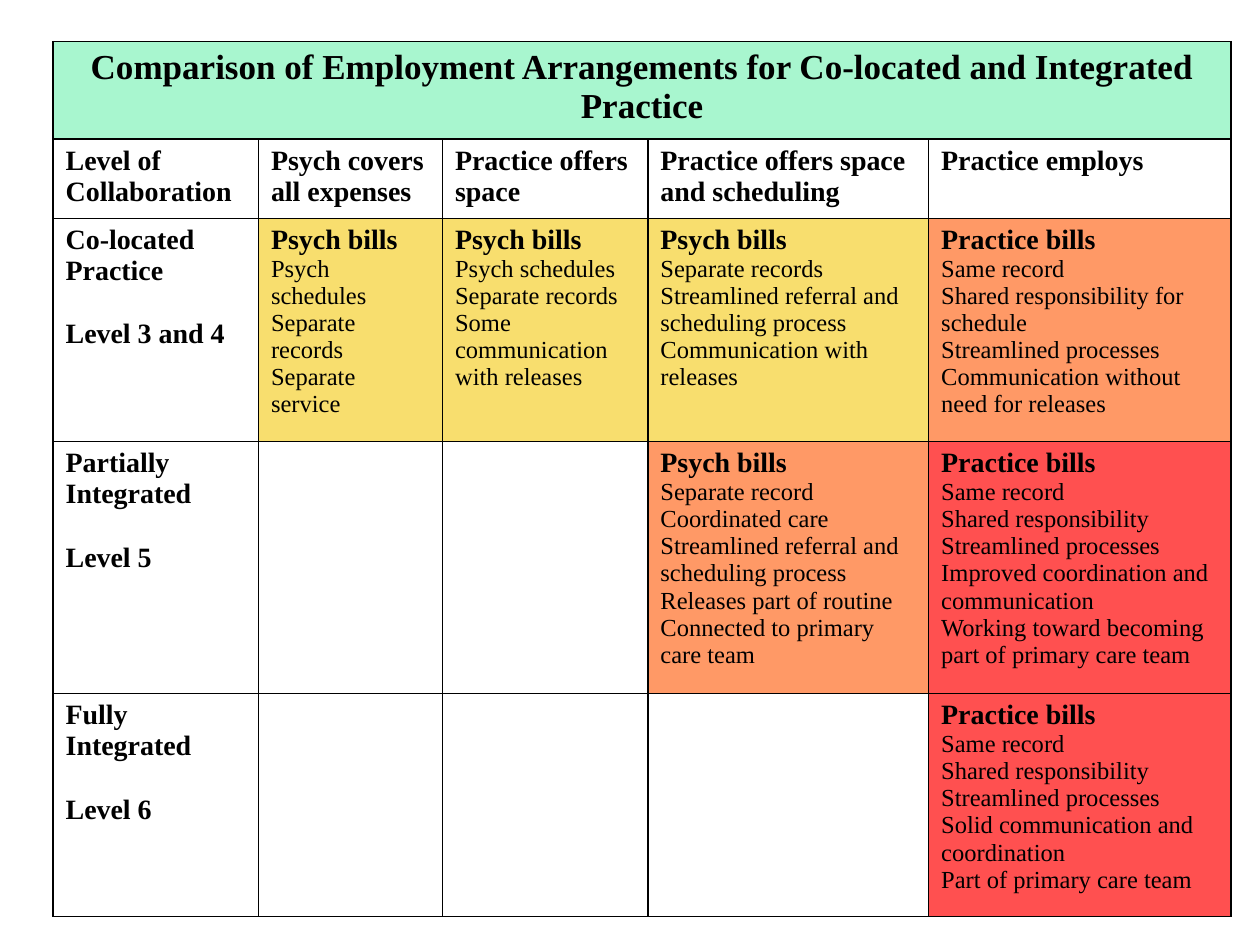
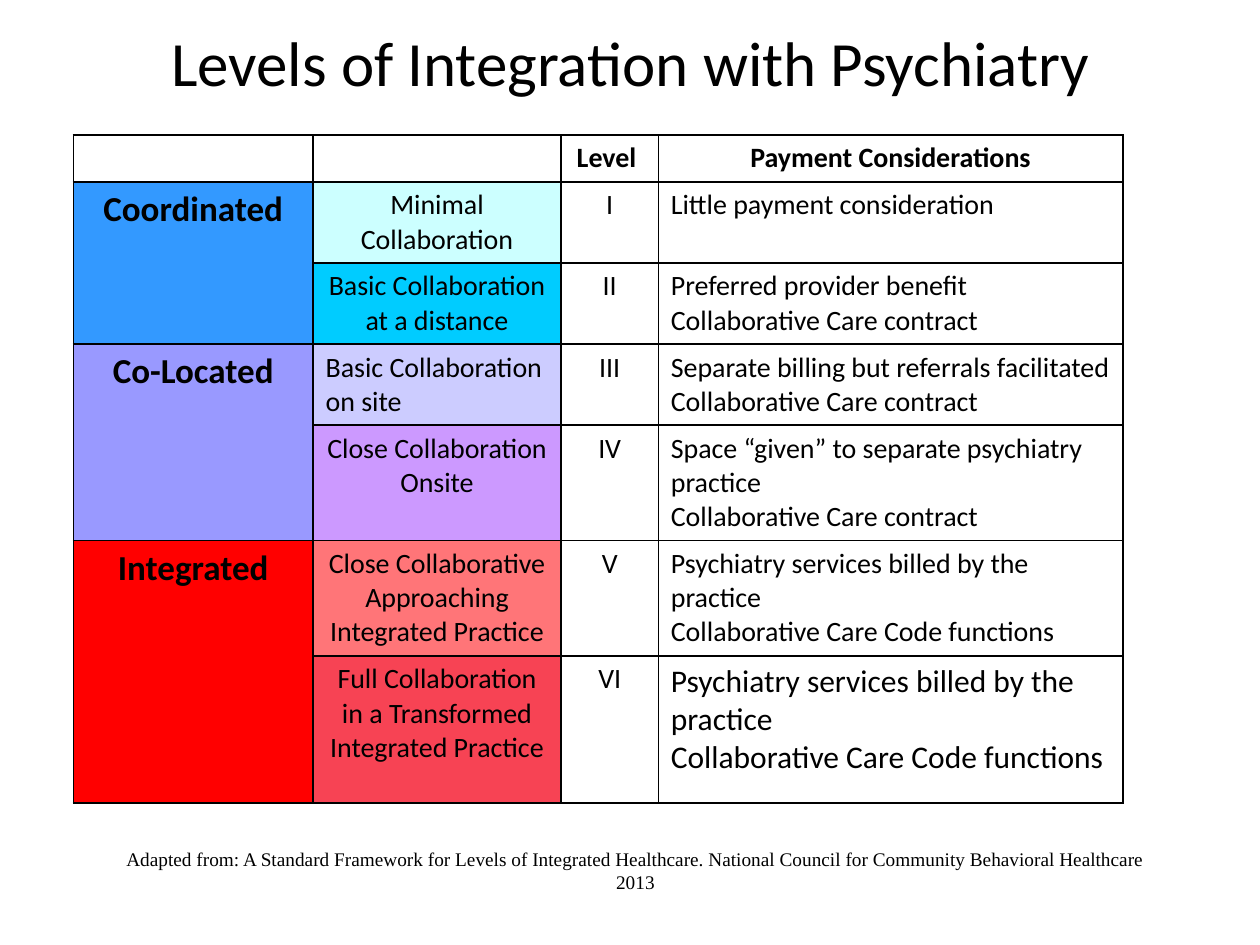
from dataclasses import dataclass
from functools import partial

from lxml.etree import SubElement
from pptx import Presentation
from pptx.enum.text import MSO_ANCHOR, PP_ALIGN
from pptx.oxml import parse_xml
from pptx.oxml.ns import nsdecls, qn
from pptx.dml.color import RGBColor
from pptx.slide import Slide
from pptx.table import Table, _Cell
from pptx.text.text import TextFrame
from pptx.util import Cm, Pt

HUES = {
    "black": "000000", "white": "FFFFFF", "mint": "A8F6CF",
    "yellow": "F8DE6E", "orange": "FF9966", "coral": "FF5050",
    "blue": "3399FF", "ice": "CCFFFF", "cyan": "00CCFF",
    "iris": "9999FF", "lilac": "CCCCFF", "purple": "CC99FF",
    "red": "FF0000", "pink": "FF7578", "rose": "F74354",
}
SERIF, SANS = "Times New Roman", "Calibri"
LEFT, MID = PP_ALIGN.LEFT, PP_ALIGN.CENTER


@dataclass(frozen=True)
class Item:
    """A cell: a head, then optional detail lines in their own format."""
    head: str = ""
    fill: str = "white"
    size: int = 16
    bold: bool = False
    align: PP_ALIGN = LEFT
    more: str = ""
    small: int = 14
    heavy: bool = False
    gap: float = 0
    down: int = 1
    wide: int = 1


@dataclass(frozen=True)
class Grid:
    left: float
    top: float
    cols: tuple[float, ...]
    rows: tuple[float, ...]
    font: str
    items: list[list[Item | None]]


def write(frame: TextFrame, text: str, *, font: str, size: int,
          bold: bool = False, align: PP_ALIGN = LEFT, gap: float = 0) -> None:
    """Append one paragraph per line; gap is the space above the first."""
    for num, line in enumerate(text.split("\n")):
        par = frame.add_paragraph() if frame.text else frame.paragraphs[0]
        par.alignment = align
        if gap and num == 0:
            par.space_before = Pt(gap)
        run = par.add_run()
        run.text = line
        run.font.name = font
        run.font.size = Pt(size)
        run.font.bold = bold
        run.font.color.rgb = RGBColor.from_string(HUES["black"])


def edge(cell: _Cell) -> None:
    """Rule all four sides of a cell."""
    props = cell._tc.get_or_add_tcPr()
    for num, side in enumerate("LRTB"):
        props.insert(num, parse_xml(
            f'<a:ln{side} {nsdecls("a")} w="12700"><a:solidFill>'
            f'<a:srgbClr val="{HUES["black"]}"/></a:solidFill></a:ln{side}>'))


def fill(table: Table, row: int, col: int, item: Item, font: str) -> None:
    cell = table.cell(row, col)
    if item.down > 1 or item.wide > 1:
        cell.merge(table.cell(row + item.down - 1, col + item.wide - 1))
    cell.fill.solid()
    cell.fill.fore_color.rgb = RGBColor.from_string(HUES[item.fill])
    edge(cell)
    frame = cell.text_frame
    if not item.head:
        SubElement(frame.paragraphs[0]._p, qn("a:endParaRPr"),
                   sz=str(item.size * 100))
        return
    write(frame, item.head, font=font, size=item.size, bold=item.bold,
          align=item.align)
    if item.more:
        write(frame, item.more, font=font, size=item.small, bold=item.heavy,
              gap=item.gap)


def draw(slide: Slide, grid: Grid) -> None:
    shape = slide.shapes.add_table(
        len(grid.rows), len(grid.cols), Cm(grid.left), Cm(grid.top),
        Cm(sum(grid.cols)), Cm(sum(grid.rows)))
    table = shape.table
    table.first_row = table.horz_banding = False
    for col, width in zip(table.columns, grid.cols):
        col.width = Cm(width)
    for row, height in zip(table.rows, grid.rows):
        row.height = Cm(height)
    for row, line in enumerate(grid.items):
        for col, item in enumerate(line):
            if item:
                fill(table, row, col, item, grid.font)
            else:
                edge(table.cell(row, col))


Head = partial(Item, bold=True)
Psych = partial(Head, "Psych bills")
Hire = partial(Head, "Practice bills")
Stage = partial(Head, small=16, heavy=True, gap=18.4)
Group = partial(Head, size=20, align=MID, down=2)
Note = partial(Item, align=MID)
VOID = Item()

JOBS = Grid(1.07, 0.84, (4.14, 3.71, 4.14, 5.66, 6.1),
            (1.96, 1.6, 4.5, 5.08, 4.5), SERIF, [
    [Head("Comparison of Employment Arrangements for Co-located and "
          "Integrated Practice", "mint", size=20, align=MID, wide=5),
     None, None, None, None],
    [Head(name) for name in (
        "Level of Collaboration", "Psych covers all expenses",
        "Practice offers space", "Practice offers space and scheduling",
        "Practice employs")],
    [Stage("Co-located Practice", more="Level 3 and 4"),
     Psych("yellow", more="Psych schedules\nSeparate records\n"
                          "Separate service"),
     Psych("yellow", more="Psych schedules\nSeparate records\n"
                          "Some communication with releases"),
     Psych("yellow", more="Separate records\n"
                          "Streamlined referral and scheduling process\n"
                          "Communication with releases"),
     Hire("orange", more="Same record\nShared responsibility for schedule\n"
                         "Streamlined processes\n"
                         "Communication without need for releases")],
    [Stage("Partially Integrated", more="Level 5"), VOID, VOID,
     Psych("orange", more="Separate record\nCoordinated care\n"
                          "Streamlined referral and scheduling process\n"
                          "Releases part of routine\n"
                          "Connected to primary care team"),
     Hire("coral", more="Same record\nShared responsibility\n"
                        "Streamlined processes\n"
                        "Improved coordination and communication\n"
                        "Working toward becoming part of primary care team")],
    [Stage("Fully Integrated", more="Level 6"), VOID, VOID, VOID,
     Hire("coral", more="Same record\nShared responsibility\n"
                        "Streamlined processes\n"
                        "Solid communication and coordination\n"
                        "Part of primary care team")],
])

CARE = "Collaborative Care contract"
CODE = ("Psychiatry services billed by the practice\n"
        "Collaborative Care Code functions")
STEPS = Grid(1.48, 2.72, (4.83, 5, 1.96, 9.37),
             (0.94, 1.6, 1.6, 1.6, 1.6, 2.29, 2.97), SANS, [
    [VOID, VOID, Head("Level ", align=MID),
     Head("Payment Considerations", align=MID)],
    [Group("Coordinated", "blue"), Note("Minimal Collaboration", "ice"),
     Note("I"), Item("Little payment consideration")],
    [None, Note("Basic Collaboration at a distance", "cyan"),
     Note("II"), Item(f"Preferred provider benefit\n{CARE}")],
    [Group("Co-Located", "iris"), Item("Basic Collaboration\non site", "lilac"),
     Note("III"), Item(f"Separate billing but referrals facilitated\n{CARE}")],
    [None, Note("Close Collaboration Onsite", "purple"), Note("IV"),
     Item(f"Space “given” to separate psychiatry practice\n{CARE}")],
    [Group("Integrated", "red"),
     Note("Close Collaborative Approaching Integrated Practice", "pink"),
     Note("V"), Item(CODE)],
    [None, Note("Full Collaboration in a Transformed Integrated Practice",
                "rose"),
     Note("VI"), Item(CODE, size=18)],
])


def main() -> None:
    deck = Presentation()
    deck.slide_width, deck.slide_height = Cm(25.4), Cm(19.05)

    draw(deck.slides.add_slide(deck.slide_layouts[6]), JOBS)

    slide = deck.slides.add_slide(deck.slide_layouts[5])
    title = slide.shapes.title
    title.left, title.top = Cm(2.97), Cm(0.33)
    title.width, title.height = Cm(19.48), Cm(1.8)
    title.text_frame.vertical_anchor = MSO_ANCHOR.MIDDLE
    write(title.text_frame, "Levels of Integration with Psychiatry",
          font=SANS, size=36, align=MID)
    draw(slide, STEPS)

    frame = slide.shapes.add_textbox(
        Cm(1.96), Cm(17.0), Cm(21.7), Cm(1.1)).text_frame
    frame.word_wrap = True
    frame.vertical_anchor = MSO_ANCHOR.MIDDLE
    write(frame, "Adapted from: A Standard Framework for Levels of Integrated "
          "Healthcare. National Council for Community Behavioral Healthcare "
          "2013", font=SERIF, size=11, align=MID)

    deck.save("out.pptx")


if __name__ == "__main__":
    main()
